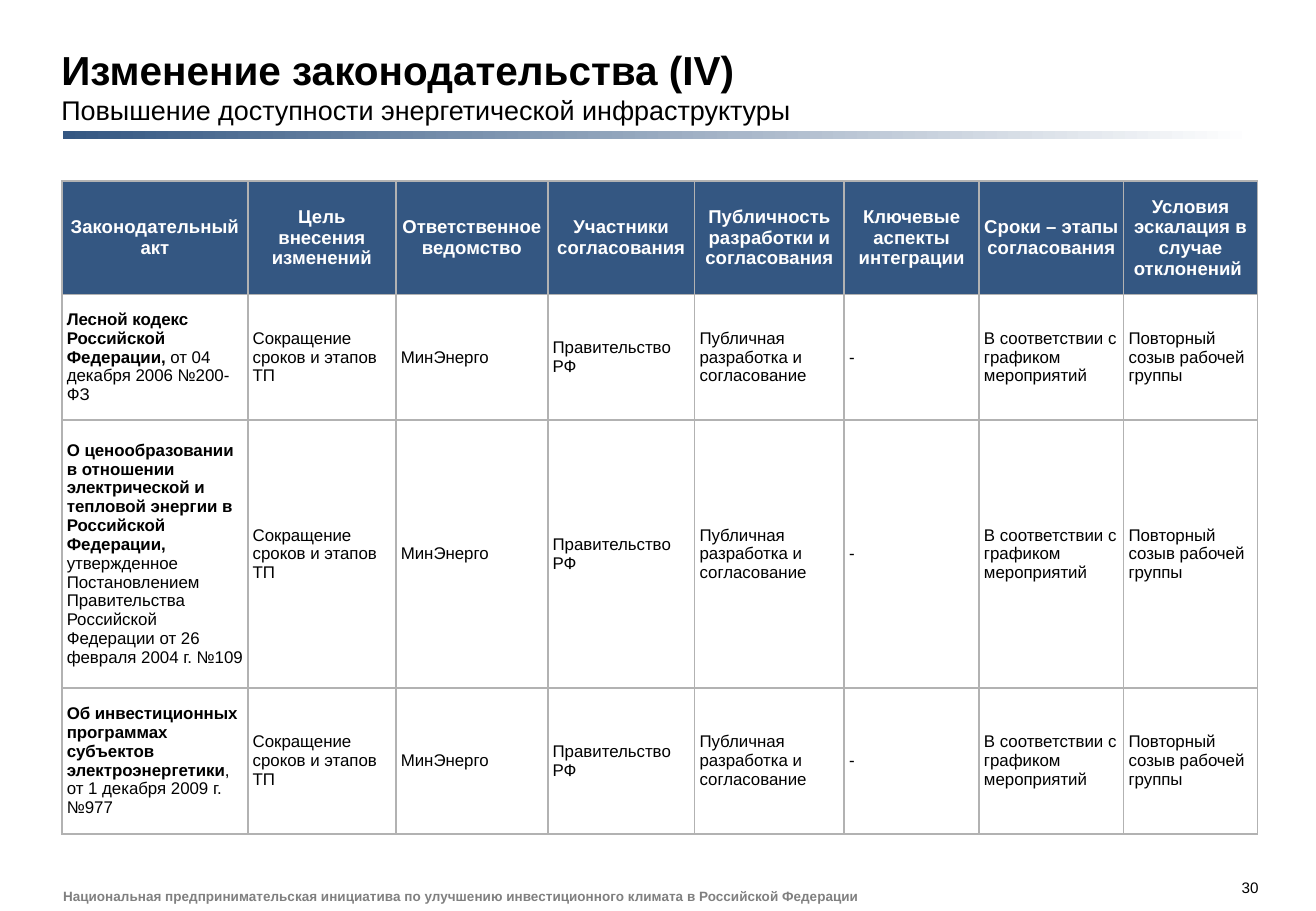
"""Build the slide on changes in energy legislation."""
from dataclasses import dataclass, field

from lxml import etree
from pptx import Presentation, util as u
from pptx.dml.color import RGBColor
from pptx.enum import shapes, text
from pptx.oxml import ns

Pt = u.Pt


@dataclass(frozen=True)
class Theme:
    """Colours, font and type sizes."""
    font: str = "Arial"
    blue: str = "345782"
    white: str = "FFFFFF"
    black: str = "000000"
    gray: str = "808080"
    rule: str = "B2B2B2"
    title: float = 24
    sub: float = 16
    head: float = 11
    body: float = 10
    page: float = 9
    foot: float = 8


@dataclass(frozen=True)
class Span:
    """A stretch of text in one format."""
    words: str
    size: float
    color: str
    bold: bool = False


@dataclass(frozen=True)
class Box:
    """A place on the slide in points."""
    left: float
    top: float
    width: float
    height: float

    def place(self) -> tuple:
        """Give the place as lengths."""
        return tuple(Pt(n) for n in (self.left, self.top, self.width, self.height))


@dataclass(frozen=True)
class Label:
    """A small text line in the footer."""
    box: Box
    span: Span
    form: dict = field(default_factory=dict)
    align: text.PP_ALIGN = text.PP_ALIGN.LEFT


@dataclass(frozen=True)
class Act:
    """A law under change, with its height in the table."""
    name: str
    rest: str
    height: float


T = Theme()
MID = text.MSO_ANCHOR.MIDDLE
HEADS = {
    "Законодательный акт": 110.2,
    "Цель внесения изменений": 87.8,
    "Ответственное ведомство": 90,
    "Участники согласования": 87.1,
    "Публичность разработки и согласования": 88.6,
    "Ключевые аспекты интеграции": 80,
    "Сроки – этапы согласования": 85.7,
    "Условия эскалация в случае отклонений ": 79.2,
}
HEAD_HIGH = 67
ACTS = [
    Act("Лесной кодекс Российской Федерации,", " от 04 декабря 2006 №200-ФЗ", 74),
    Act("О ценообразовании в отношении электрической и тепловой энергии "
        "в Российской Федерации, ",
        "утвержденное Постановлением Правительства Российской Федерации "
        "от 26 февраля 2004 г. №109", 158.5),
    Act("Об инвестиционных программах субъектов электроэнергетики",
        ", от 1 декабря 2009 г. №977", 86.2),
]
TERMS = ["Сокращение сроков и этапов ТП", "МинЭнерго", "Правительство РФ",
         "Публичная разработка и согласование", "-",
         "В соответствии с графиком мероприятий", "Повторный созыв рабочей группы"]
LABELS = [
    Label(Box(730.8, 520.6, 15.1, 10.1), Span("30", T.page, T.black),
          align=text.PP_ALIGN.RIGHT),
    Label(Box(37.4, 526.3, 476, 9.4),
          Span("Национальная предпринимательская инициатива по улучшению "
               "инвестиционного климата в Российской Федерации",
               T.foot, T.gray, True), {"vertical_anchor": MID}),
]


def apply(item, form: dict) -> None:
    """Set attributes from format values."""
    for key, value in form.items():
        setattr(item, key, value)


def pad(side: float, end: float) -> dict:
    """Give margins for the sides and the ends."""
    return {"margin_left": Pt(side), "margin_right": Pt(side),
            "margin_top": Pt(end), "margin_bottom": Pt(end)}


def write(para, span: Span) -> None:
    """Add a span to a paragraph."""
    run = para.add_run()
    run.text = span.words
    apply(run.font, {"name": T.font, "size": Pt(span.size), "bold": span.bold})
    run.font.color.rgb = RGBColor.from_string(span.color)


def draw_title(slide) -> None:
    """Fill the title with its heading and subheading."""
    title = slide.shapes.title
    box = Box(36.4, 13, 708, 65.5)
    apply(title, dict(zip(("left", "top", "width", "height"), box.place())))
    frame = title.text_frame
    apply(frame, {**pad(0, 3.6), "word_wrap": True,
                  "auto_size": text.MSO_AUTO_SIZE.NONE,
                  "vertical_anchor": text.MSO_ANCHOR.BOTTOM})
    para = frame.paragraphs[0]
    para.alignment = text.PP_ALIGN.LEFT
    write(para, Span("Изменение законодательства (IV)", T.title, T.black, True))
    para.add_line_break()
    write(para, Span("Повышение доступности энергетической инфраструктуры",
                     T.sub, T.black))


def draw_bar(slide) -> None:
    """Draw the fading bar under the title."""
    bar = slide.shapes.add_shape(shapes.MSO_SHAPE.RECTANGLE,
                                 *Box(37.4, 77.8, 705.6, 4.5).place())
    bar.shadow.inherit = False
    bar.line.fill.background()
    bar.fill.gradient()
    bar.fill.gradient_angle = 0
    for stop, color, spot in zip(bar.fill.gradient_stops, (T.blue, T.white), (0, 1)):
        stop.color.rgb = RGBColor.from_string(color)
        stop.position = spot


def draw_label(slide, label: Label) -> None:
    """Draw a line of the footer."""
    frame = slide.shapes.add_textbox(*label.box.place()).text_frame
    apply(frame, {**pad(0, 0), "word_wrap": False, **label.form})
    frame.paragraphs[0].alignment = label.align
    write(frame.paragraphs[0], label.span)


def edge(cell) -> None:
    """Give a cell thin gray borders."""
    props = cell._tc.get_or_add_tcPr()
    for side in ("a:lnL", "a:lnR", "a:lnT", "a:lnB"):
        line = etree.SubElement(props, ns.qn(side), w=str(Pt(1)))
        fill = etree.SubElement(line, ns.qn("a:solidFill"))
        etree.SubElement(fill, ns.qn("a:srgbClr"), val=T.rule)


def draw_cell(cell, spans: list[Span], head: bool) -> None:
    """Format and fill a cell."""
    apply(cell, {**pad(2.9, 7.2), "vertical_anchor": MID})
    edge(cell)
    if head:
        cell.fill.solid()
        cell.fill.fore_color.rgb = RGBColor.from_string(T.blue)
    else:
        cell.fill.background()
    para = cell.text_frame.paragraphs[0]
    para.alignment = text.PP_ALIGN.CENTER if head else text.PP_ALIGN.LEFT
    for span in spans:
        write(para, span)


def draw_table(slide) -> None:
    """Draw the table of laws."""
    rows = [[[Span(name, T.head, T.white, True)] for name in HEADS]]
    for act in ACTS:
        law = [Span(act.name, T.body, T.black, True), Span(act.rest, T.body, T.black)]
        rows.append([law] + [[Span(term, T.body, T.black)] for term in TERMS])
    highs = [HEAD_HIGH] + [act.height for act in ACTS]
    box = Box(36.7, 107.3, sum(HEADS.values()), sum(highs))
    grid = slide.shapes.add_table(len(rows), len(HEADS), *box.place()).table
    apply(grid, {"first_row": False, "horz_banding": False})
    for col, wide in zip(grid.columns, HEADS.values()):
        col.width = Pt(wide)
    for i, (row, high) in enumerate(zip(rows, highs)):
        grid.rows[i].height = Pt(high)
        for j, spans in enumerate(row):
            draw_cell(grid.cell(i, j), spans, i == 0)


def main() -> None:
    """Build and save the slide."""
    deck = Presentation()
    apply(deck, {"slide_width": Pt(780), "slide_height": Pt(540)})
    slide = deck.slides.add_slide(deck.slide_layouts[5])
    draw_title(slide)
    draw_bar(slide)
    for label in LABELS:
        draw_label(slide, label)
    draw_table(slide)
    deck.save("out.pptx")


if __name__ == "__main__":
    main()
